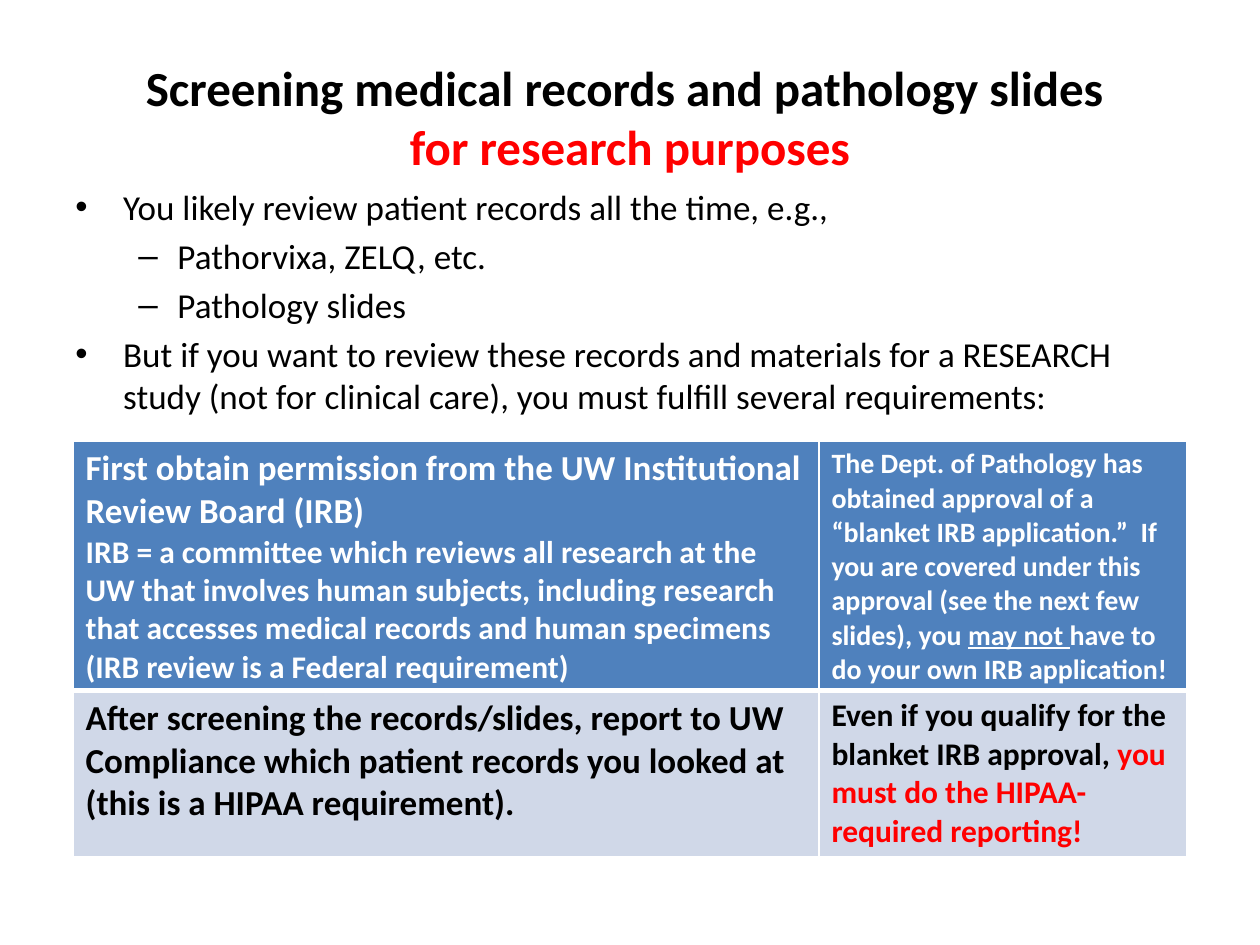
from lxml.etree import SubElement
from pptx import Presentation
from pptx.dml.color import RGBColor
from pptx.enum.text import MSO_ANCHOR, PP_ALIGN
from pptx.oxml.ns import qn
from pptx.util import Inches, Pt

BLACK = RGBColor(0x00, 0x00, 0x00)
WHITE = RGBColor(0xFF, 0xFF, 0xFF)
RED = RGBColor(0xFF, 0x00, 0x00)
BLUE = RGBColor(0x4F, 0x81, 0xBD)
PALE_BLUE = RGBColor(0xD0, 0xD8, 0xE8)


def add_span(para, text, size, color=BLACK, bold=False, underline=False):
    span = para.add_run()
    span.text = text
    font = span.font
    font.name = "Calibri"
    font.size = Pt(size)
    font.color.rgb = color
    font.bold = bold
    font.underline = underline


def add_border(cell, side, width):
    """Draw a white line on one side (L, R, T or B); call before filling the cell."""
    properties = cell._tc.get_or_add_tcPr()
    line = SubElement(properties, qn(f"a:ln{side}"), w=str(Pt(width)))
    fill = SubElement(line, qn("a:solidFill"))
    SubElement(fill, qn("a:srgbClr"), val=str(WHITE))


deck = Presentation()
deck.slide_width = Inches(10)
deck.slide_height = Inches(7.5)
page = deck.slides.add_slide(deck.slide_layouts[6])

# Title
title = page.shapes.add_textbox(Inches(0.5), Inches(0.3), Inches(9), Inches(1.25)).text_frame
title.word_wrap = True
title.vertical_anchor = MSO_ANCHOR.MIDDLE
para = title.paragraphs[0]
para.alignment = PP_ALIGN.CENTER
add_span(para, "Screening medical records and pathology slides ", 28, bold=True)
para.add_line_break()
add_span(para, "for research purposes", 28, RED, bold=True)

# Bullets: left margin and hanging indent by level
bullet_styles = [("•", 0.38, 0.38), ("–", 0.81, 0.31)]
bullets = [
    (0, "You likely review patient records all the time, e.g.,"),
    (1, "Pathorvixa, ZELQ, etc."),
    (1, "Pathology slides"),
    (0, "But if you want to review these records and materials for a RESEARCH study "
        "(not for clinical care), you must fulfill several requirements:"),
]
body = page.shapes.add_textbox(Inches(0.5), Inches(1.42), Inches(9), Inches(3.33)).text_frame
body.word_wrap = True
for index, (level, text) in enumerate(bullets):
    para = body.add_paragraph() if index else body.paragraphs[0]
    mark, margin, hanging = bullet_styles[level]
    para.level = level
    para.space_before = Pt(4)
    properties = para._p.get_or_add_pPr()
    properties.set("marL", str(Inches(margin)))
    properties.set("indent", str(-Inches(hanging)))
    SubElement(properties, qn("a:buFont"), typeface="Arial")
    SubElement(properties, qn("a:buChar"), char=mark)
    add_span(para, text, 20)

# Requirements table: rows of cells, cells of paragraphs, paragraphs of spans
requirements = [
    [
        [
            [("First obtain permission from the UW Institutional Review Board (IRB)", 20, {})],
            [("IRB = a committee which reviews all research at the UW that involves human "
              "subjects, including research that accesses medical records and human specimens  "
              "(IRB review is a Federal requirement)", 18, {})],
        ],
        [
            [("The Dept. of Pathology has obtained approval of a “blanket IRB application.”  "
              "If you are covered under this approval (see the next few slides), you ", 16, {}),
             ("may not ", 16, {"underline": True}),
             ("have to do your own IRB application!", 16, {})],
        ],
    ],
    [
        [
            [("After screening the records/slides, report to UW Compliance which patient "
              "records you looked at (this is a HIPAA requirement).", 20, {})],
        ],
        [
            [("Even if you qualify for the blanket IRB approval, ", 18, {}),
             ("you must do the HIPAA-required reporting!", 18, {"color": RED})],
        ],
    ],
]
row_styles = [
    (1.98, BLUE, WHITE, {"L": 1, "R": 1, "T": 1, "B": 3}),
    (1.32, PALE_BLUE, BLACK, {"L": 1, "R": 1, "T": 3, "B": 1}),
]
table = page.shapes.add_table(2, 2, Inches(0.58), Inches(3.5), Inches(8.84), Inches(3.3)).table
for column, width in zip(table.columns, (5.92, 2.92)):
    column.width = Inches(width)
for row, cells, (height, fill, color, borders) in zip(table.rows, requirements, row_styles):
    row.height = Inches(height)
    for cell, paragraphs in zip(row.cells, cells):
        for side, line_width in borders.items():
            add_border(cell, side, line_width)
        cell.fill.solid()
        cell.fill.fore_color.rgb = fill
        for index, spans in enumerate(paragraphs):
            para = cell.text_frame.add_paragraph() if index else cell.text_frame.paragraphs[0]
            for text, size, style in spans:
                add_span(para, text, size, **{"color": color, "bold": True, **style})

deck.save("out.pptx")
